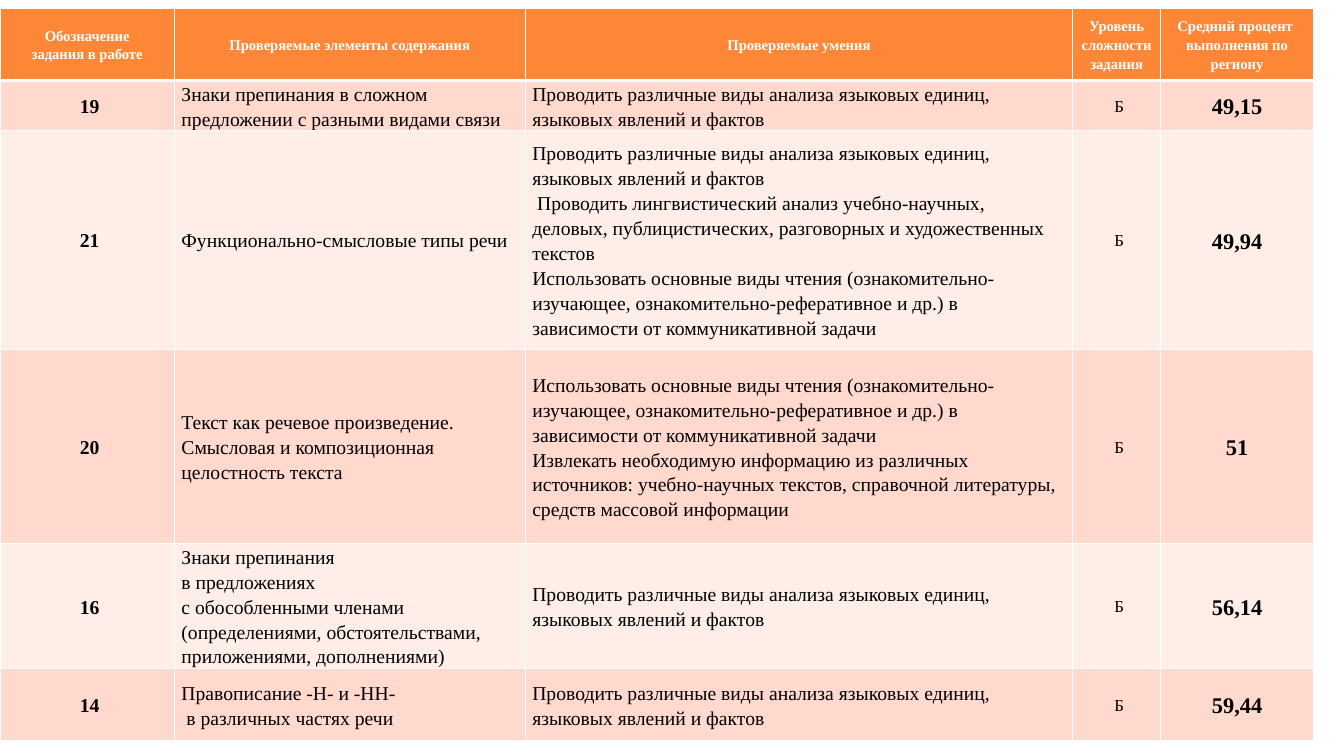
from lxml.etree import SubElement
from pptx import Presentation
from pptx.dml.color import RGBColor
from pptx.enum.text import MSO_ANCHOR, PP_ALIGN
from pptx.oxml import parse_xml
from pptx.oxml.ns import nsdecls
from pptx.util import Inches, Pt

ANALYSIS = "Проводить различные виды анализа языковых единиц, языковых явлений и фактов"
READING = ("Использовать основные виды чтения (ознакомительно-изучающее, "
           "ознакомительно-реферативное и др.) в зависимости от коммуникативной задачи")
LINGUISTIC = (" Проводить лингвистический анализ учебно-научных, деловых, "
              "публицистических, разговорных и художественных текстов")
SEARCH = ("Извлекать необходимую информацию из различных источников: учебно-научных "
          "текстов, справочной литературы, средств массовой информации")

HEADER = [
    ["Обозначение", "задания в работе"],
    ["Проверяемые элементы содержания"],
    ["Проверяемые умения"],
    ["Уровень сложности задания"],
    ["Средний процент ", "выполнения по региону"],
]
TASKS = [
    ("19", ["Знаки препинания в сложном предложении с разными видами связи"],
     [ANALYSIS], "49,15"),
    ("21", ["Функционально-смысловые типы речи"],
     [ANALYSIS, LINGUISTIC, READING], "49,94"),
    ("20", ["Текст как речевое произведение.", "Смысловая и композиционная",
            "целостность текста"],
     [READING, SEARCH], "51"),
    ("16", ["Знаки препинания", "в предложениях",
            "с обособленными членами (определениями, обстоятельствами,",
            "приложениями, дополнениями)"],
     [ANALYSIS], "56,14"),
    ("14", ["Правописание -Н- и -НН-", "в различных частях речи"],
     [ANALYSIS], "59,44"),
]
INDENTED = {"в различных частях речи"}
COLUMN_WIDTHS = [1.73, 3.48, 5.43, 0.87, 1.52]
ROW_HEIGHTS = [0.72, 0.48, 2.17, 1.93, 1.2, 0.72]
HEADER_FORMAT = {"size": 10.5, "bold": True, "align": PP_ALIGN.CENTER, "indent": False}
COLUMN_FORMATS = [
    {"size": 14, "bold": True, "align": PP_ALIGN.CENTER, "indent": True},
    {"size": 14, "bold": False, "align": PP_ALIGN.LEFT, "indent": False},
    {"size": 14, "bold": False, "align": PP_ALIGN.LEFT, "indent": False},
    {"size": 12, "bold": False, "align": PP_ALIGN.CENTER, "indent": True},
    {"size": 16, "bold": True, "align": PP_ALIGN.CENTER, "indent": False},
]


def color(value):
    """Turn a hex string into a colour."""
    return RGBColor.from_string(value)


class TaskSlide:
    """Hold the style and the current slide."""

    font = "Times New Roman"
    header_fill = "FE8637"
    band_fills = ["FFD9CE", "FFEDE8"]
    white, black = "FFFFFF", "000000"

    def __init__(self, presentation):
        """Add an empty slide."""
        self.slide = presentation.slides.add_slide(presentation.slide_layouts[6])

    def table(self, left, top, rows):
        """Add the table with a header row and banded task rows."""
        frame = self.slide.shapes.add_table(
            len(rows), len(COLUMN_WIDTHS), Inches(left), Inches(top),
            Inches(sum(COLUMN_WIDTHS)), Inches(sum(ROW_HEIGHTS)))
        table = frame.table
        for column, width in zip(table.columns, COLUMN_WIDTHS):
            column.width = Inches(width)
        for row, height in zip(table.rows, ROW_HEIGHTS):
            row.height = Inches(height)
        for row_index, texts in enumerate(rows):
            header = row_index == 0
            fill = self.header_fill if header else self.band_fills[(row_index - 1) % 2]
            for column_index, lines in enumerate(texts):
                cell = table.cell(row_index, column_index)
                style = HEADER_FORMAT if header else COLUMN_FORMATS[column_index]
                self.cell(cell, lines, fill, style, self.white if header else self.black)
                self.borders(cell, top=3 if row_index == 1 else 1, bottom=3 if header else 1)

    def cell(self, cell, lines, fill, style, text_color):
        """Fill one cell with its paragraphs."""
        layout = {"vertical_anchor": MSO_ANCHOR.MIDDLE,
                  "margin_left": Inches(0.07), "margin_right": Inches(0.07),
                  "margin_top": 0, "margin_bottom": 0}
        for name, value in layout.items():
            setattr(cell, name, value)
        cell.fill.solid()
        cell.fill.fore_color.rgb = color(fill)
        frame = cell.text_frame
        for index, line in enumerate(lines):
            paragraph = frame.add_paragraph() if index else frame.paragraphs[0]
            paragraph.alignment = style["align"]
            paragraph.line_spacing = 1.15
            if style["indent"] or line in INDENTED:
                paragraph._p.get_or_add_pPr().set("indent", str(Inches(0.05)))
            run = paragraph.add_run()
            run.text = line
            formats = {"name": self.font, "size": Pt(style["size"]), "bold": style["bold"]}
            for name, value in formats.items():
                setattr(run.font, name, value)
            run.font.color.rgb = color(text_color)

    def borders(self, cell, top, bottom):
        """Draw white lines round a cell."""
        properties = cell._tc.get_or_add_tcPr()
        widths = {"lnL": 1, "lnR": 1, "lnT": top, "lnB": bottom}
        for index, (tag, width) in enumerate(widths.items()):
            line = parse_xml(f'<a:{tag} {nsdecls("a")} w="{Pt(width)}"/>')
            namespace = "{" + line.nsmap["a"] + "}"
            solid = SubElement(line, namespace + "solidFill")
            SubElement(solid, namespace + "srgbClr", val=self.white)
            properties.insert(index, line)


def main():
    """Build and save the presentation."""
    presentation = Presentation()
    presentation.slide_width = Inches(13.33)
    presentation.slide_height = Inches(7.5)
    rows = [HEADER] + [[[number], content, skills, ["Б"], [percent]]
                       for number, content, skills, percent in TASKS]
    TaskSlide(presentation).table(0, 0.08, rows)
    presentation.save("out.pptx")


if __name__ == "__main__":
    main()
